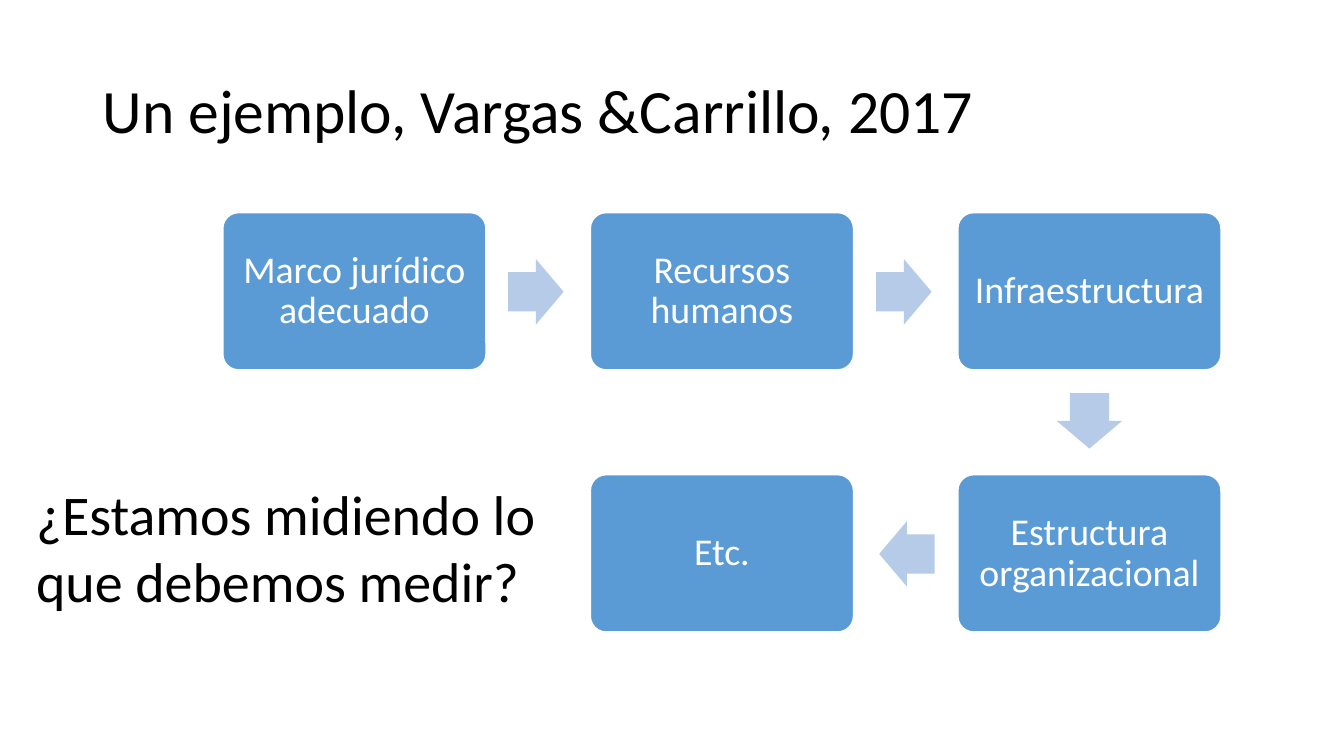
"""Build a slide showing a chain of steps and a closing question."""
from dataclasses import dataclass

from pptx import Presentation
from pptx.dml.color import RGBColor as RGB
from pptx.enum.shapes import MSO_SHAPE as Shape
from pptx.enum.text import MSO_ANCHOR as Anchor, PP_ALIGN as Align
from pptx.util import Inches, Pt


@dataclass(frozen=True)
class Theme:
    font: str = "Calibri"
    ink: RGB = RGB(0, 0, 0)
    pale: RGB = RGB(255, 255, 255)
    box: RGB = RGB(0x5B, 0x9B, 0xD5)
    arrow: RGB = RGB(0xB5, 0xCB, 0xE7)
    title: Pt = Pt(44)
    ask: Pt = Pt(40)
    step: Pt = Pt(27)


THEME = Theme()
LEFT, TOP = 2.21, 2.11
STEP_X, STEP_Y = 3.645, 2.6
BOX_W, BOX_H = 2.61, 1.56
ARROW_W, ARROW_H = 0.55, 0.65

STEPS = [
    ("Marco jurídico adecuado", 0, 0),
    ("Recursos humanos", 1, 0),
    ("Infraestructura", 2, 0),
    ("Estructura organizacional", 2, 1),
    ("Etc.", 1, 1),
]
ARROWS = [(5.04, 2.57, 0), (8.69, 2.57, 0), (10.53, 3.85, 90), (8.72, 5.17, 180)]


def style(item, values):
    """Set each named attribute on an item."""
    for name, value in values.items():
        setattr(item, name, value)


def write(frame, text, size, color, space=None, align=None, **frame_values):
    """Put one styled paragraph in a text frame."""
    style(frame, {"word_wrap": True, **frame_values})
    para = frame.paragraphs[0]
    para.text = text
    style(para, {"line_spacing": space, "alignment": align})
    style(para.font, {"name": THEME.font, "size": size})
    para.font.color.rgb = color


def add_text(slide, area, text, size, **values):
    """Add a text box in dark ink."""
    box = slide.shapes.add_textbox(*map(Inches, area))
    write(box.text_frame, text, size, THEME.ink, **values)


def add_block(slide, kind, area, fill, adjust):
    """Add a filled preset shape without a shadow or line."""
    block = slide.shapes.add_shape(kind, *map(Inches, area))
    block.shadow.inherit = False
    block.fill.solid()
    block.fill.fore_color.rgb = fill
    block.line.fill.background()
    for index, value in enumerate(adjust):
        block.adjustments[index] = value
    return block


def add_step(slide, text, col, row):
    """Add a rounded step box at a grid place."""
    area = (LEFT + col * STEP_X, TOP + row * STEP_Y, BOX_W, BOX_H)
    box = add_block(slide, Shape.ROUNDED_RECTANGLE, area, THEME.box, [0.1])
    box.line.color.rgb = THEME.pale
    box.line.width = Pt(1)
    sides = ("left", "top", "right", "bottom")
    pads = {f"margin_{side}": Inches(0.11) for side in sides}
    write(box.text_frame, text, THEME.step, THEME.pale, space=0.9,
          align=Align.CENTER, vertical_anchor=Anchor.MIDDLE, **pads)


def add_arrow(slide, left, top, turn):
    """Add a block arrow turned by some degrees."""
    area = (left, top, ARROW_W, ARROW_H)
    arrow = add_block(slide, Shape.RIGHT_ARROW, area, THEME.arrow, [0.6, 0.5])
    arrow.rotation = turn


def main():
    """Build and save the slide."""
    deck = Presentation()
    style(deck, {"slide_width": Inches(13.33), "slide_height": Inches(7.5)})
    slide = deck.slides.add_slide(deck.slide_layouts[6])
    add_text(slide, (0.92, 0.4, 11.5, 1.45), "Un ejemplo, Vargas &Carrillo, 2017",
             THEME.title, space=0.9, vertical_anchor=Anchor.MIDDLE)
    for step in STEPS:
        add_step(slide, *step)
    for arrow in ARROWS:
        add_arrow(slide, *arrow)
    add_text(slide, (0.26, 4.71, 5.16, 1.45),
             "¿Estamos midiendo lo que debemos medir?", THEME.ask)
    deck.save("out.pptx")


if __name__ == "__main__":
    main()
